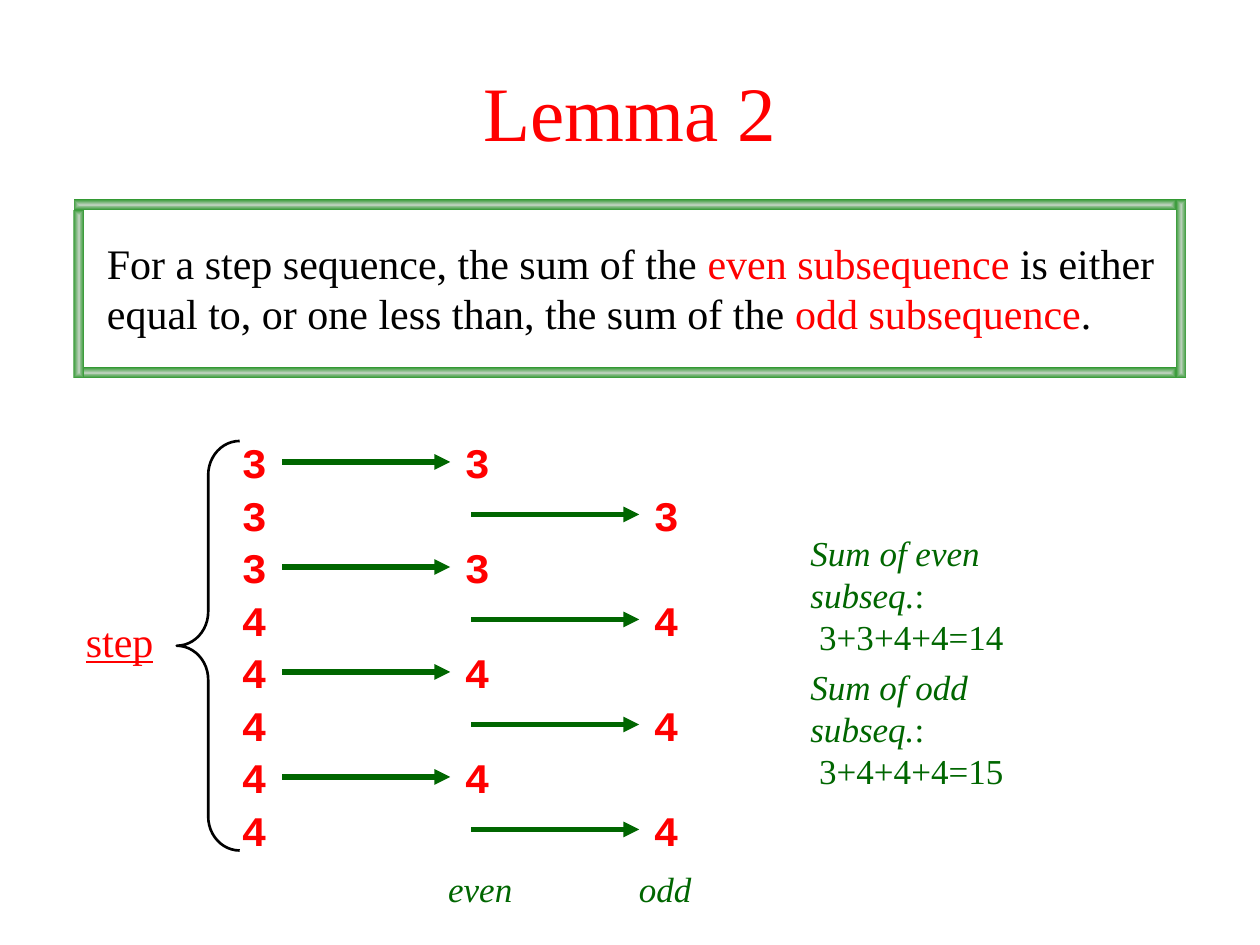
from lxml import etree
from pptx import Presentation
from pptx import util as u
from pptx.dml.color import RGBColor
from pptx.enum import shapes, text
from pptx.oxml.ns import qn

SERIF, MONO = "Times New Roman", "Courier New"
RED, GREEN, BLACK = "FF0000", "006600", "000000"
FRAME_LIGHT, FRAME_DARK = "B9D0B9", "339933"

STEP_SEQUENCE = [3, 3, 3, 4, 4, 4, 4, 4]
SEQUENCE_X = 131
SUBSEQUENCE_X = [258.5, 366.5]
FIRST_ROW, ROW_PITCH, ROW_HEIGHT = 246, 30, 36
ARROW_LENGTH, ARROW_GAP = 96, 1.2


def rgb(hex_colour):
    return RGBColor.from_string(hex_colour)


def points(*lengths):
    return [u.Pt(length) for length in lengths]


def add_run(paragraph, words, font=SERIF, size=24, colour=BLACK,
            bold=False, italic=False, underline=False):
    run = paragraph.add_run()
    run.text = words
    run.font.name, run.font.size = font, u.Pt(size)
    run.font.color.rgb = rgb(colour)
    run.font.bold, run.font.italic, run.font.underline = bold, italic, underline


def add_text(slide, box, paragraphs, wrap=False, right_inset=7.2, **style):
    """Each paragraph is a list of (words, style overrides) pairs."""
    frame = slide.shapes.add_textbox(*points(*box)).text_frame
    frame.word_wrap = wrap
    frame.margin_right = u.Pt(right_inset)
    frame.auto_size = (text.MSO_AUTO_SIZE.NONE if wrap
                       else text.MSO_AUTO_SIZE.SHAPE_TO_FIT_TEXT)
    for index, runs in enumerate(paragraphs):
        paragraph = frame.add_paragraph() if index else frame.paragraphs[0]
        for words, overrides in runs:
            add_run(paragraph, words, **{**style, **overrides})


def add_label(slide, box, words, **style):
    add_text(slide, box, [[(words, {})]], **style)


def add_number(slide, left, top, number):
    add_label(slide, (left, top, 28.8, ROW_HEIGHT), str(number),
              font=MONO, colour=RED, bold=True)


def add_arrow(slide, start, end, y):
    arrow = slide.shapes.add_connector(
        shapes.MSO_CONNECTOR.STRAIGHT, *points(start, y, end, y))
    arrow.line.color.rgb = rgb(GREEN)
    arrow.line.width = u.Pt(3)
    etree.SubElement(arrow.line._get_or_add_ln(), qn("a:tailEnd"), type="triangle")
    etree.SubElement(arrow._element.spPr, qn("a:effectLst"))


def add_frame_bar(slide, box):
    """Bar shaded from a light middle to dark edges."""
    bar = slide.shapes.add_shape(shapes.MSO_SHAPE.RECTANGLE, *points(*box))
    bar.shadow.inherit = False
    bar.line.fill.background()
    bar.fill.gradient()
    for stop, colour in zip(bar.fill.gradient_stops, (FRAME_LIGHT, FRAME_DARK)):
        stop.color.rgb = rgb(colour)
    gradient = bar._element.spPr.find(qn("a:gradFill"))
    linear = gradient.find(qn("a:lin"))
    shading = etree.Element(qn("a:path"), path="shape")
    etree.SubElement(shading, qn("a:fillToRect"),
                     {side: "50000" for side in "ltrb"})
    gradient.replace(linear, shading)


def add_brace(slide, box):
    brace = slide.shapes.add_shape(shapes.MSO_SHAPE.LEFT_BRACE, *points(*box))
    brace.shadow.inherit = False
    brace.fill.background()
    brace.line.color.rgb = rgb(BLACK)
    brace.line.width = u.Pt(1.5)
    brace.adjustments[0], brace.adjustments[1] = 0.54, 0.5


def add_title(slide, words):
    title = slide.shapes.title
    title.left, title.top, title.width, title.height = points(54, 18, 612, 90)
    title.text_frame.vertical_anchor = text.MSO_ANCHOR.MIDDLE
    paragraph = title.text_frame.paragraphs[0]
    paragraph.alignment = text.PP_ALIGN.CENTER
    add_run(paragraph, words, size=44, colour=RED)


def add_lemma(slide):
    red = {"colour": RED}
    add_text(slide, (54, 132, 624, 65), [[
        ("For a step sequence, the sum of the ", {}),
        ("even subsequence", red),
        (" is either equal to, or one less than, the sum of the ", {}),
        ("odd subsequence", red),
        (".", {}),
    ]], wrap=True)
    for bar in [(42, 114, 630, 6), (42, 210, 630, 6),
                (42, 120, 6, 96), (672, 114, 6, 102)]:
        add_frame_bar(slide, bar)


def add_split(slide):
    """Rows go alternately to the even and the odd subsequence."""
    for row, number in enumerate(STEP_SEQUENCE):
        top = FIRST_ROW + row * ROW_PITCH
        column_x = SUBSEQUENCE_X[row % 2]
        arrow_end = column_x - ARROW_GAP
        add_number(slide, SEQUENCE_X, top, number)
        add_number(slide, column_x, top, number)
        add_arrow(slide, arrow_end - ARROW_LENGTH, arrow_end, top + ROW_HEIGHT / 2)
    for words, left, width in [("even", 249, 51), ("odd", 358, 44.5)]:
        add_label(slide, (left, 492, width, 31), words,
                  size=20, colour=GREEN, italic=True)
    add_brace(slide, (101, 252, 36, 234))
    add_label(slide, (42, 348, 53, 36), "step", colour=RED, underline=True)


def add_sum(slide, top, width, parity, total):
    upright = {"italic": False}
    add_text(slide, (456, top, width, 55.5), [
        [(f"Sum of {parity} subseq.", {}), (":", upright)],
        [(" ", {}), (total, upright)],
    ], wrap=True, right_inset=50, size=20, colour=GREEN, italic=True)


def main():
    deck = Presentation()
    deck.slide_width, deck.slide_height = points(720, 540)
    slide = deck.slides.add_slide(deck.slide_layouts[5])
    add_title(slide, "Lemma 2")
    add_split(slide)
    add_lemma(slide)
    add_sum(slide, 300, 181, "even", "3+3+4+4=14")
    add_sum(slide, 376.5, 174, "odd", "3+4+4+4=15")
    deck.save("out.pptx")


if __name__ == "__main__":
    main()
